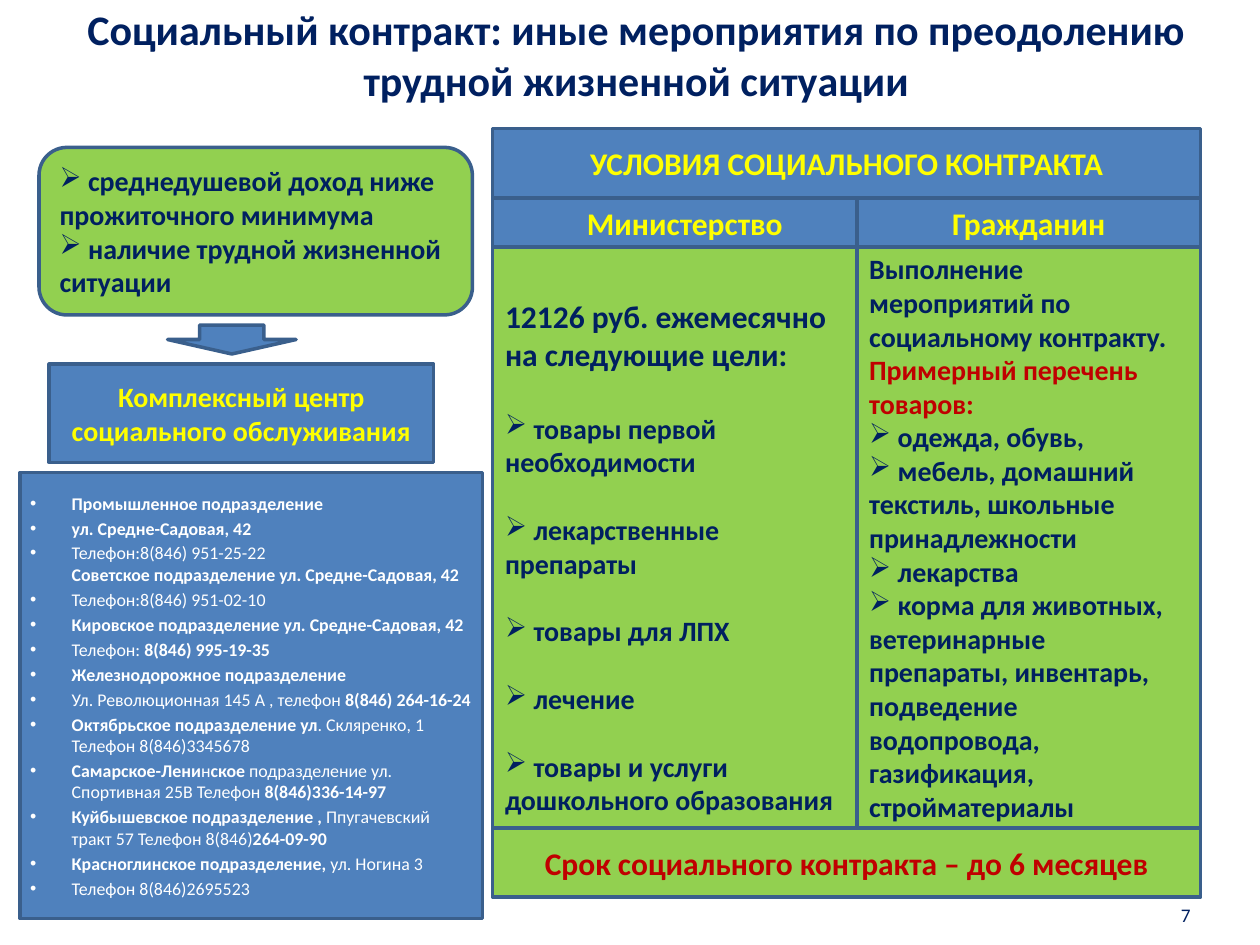
"""Build the slide on the conditions of a social contract."""
from copy import deepcopy

from lxml import etree
from pptx import Presentation
from pptx.dml.color import RGBColor
from pptx.enum.shapes import MSO_SHAPE
from pptx.enum.text import MSO_ANCHOR, PP_ALIGN
from pptx.oxml.ns import qn
from pptx.util import Inches, Pt

RECT, ROUNDED, ARROW = MSO_SHAPE.RECTANGLE, MSO_SHAPE.ROUNDED_RECTANGLE, MSO_SHAPE.DOWN_ARROW
MIDDLE = MSO_ANCHOR.MIDDLE
LEFT, CENTER, RIGHT = PP_ALIGN.LEFT, PP_ALIGN.CENTER, PP_ALIGN.RIGHT
NAVY = RGBColor(0x00, 0x20, 0x60)
YELLOW = RGBColor(0xFF, 0xFF, 0x00)
RED = RGBColor(0xC0, 0x00, 0x00)
WHITE = RGBColor(0xFF, 0xFF, 0xFF)
GREEN = RGBColor(0x92, 0xD0, 0x50)
BLUE = RGBColor(0x4F, 0x81, 0xBD)
OUTLINE = RGBColor(0x3A, 0x5F, 0x8C)

TITLE = "Социальный контракт: иные мероприятия по преодолению трудной жизненной ситуации"
PAGE = "7"
CRITERIA = [
    "➢ среднедушевой доход ниже прожиточного минимума",
    "➢ наличие трудной жизненной ситуации",
]
CENTRE = "Комплексный центр социального обслуживания"
CONDITIONS = "УСЛОВИЯ СОЦИАЛЬНОГО КОНТРАКТА"
MINISTRY, CITIZEN = "Министерство", "Гражданин"
SUPPORT = [
    "|12126 руб. ежемесячно на следующие цели:|",
    "➢ товары первой необходимости",
    "➢ лекарственные препараты",
    "➢ товары для ЛПХ",
    "➢ лечение",
    "➢ товары и услуги дошкольного образования",
]
DUTIES = [
    "Выполнение мероприятий по социальному контракту. |Примерный перечень товаров:|",
    "➢ одежда, обувь,",
    "➢ мебель, домашний текстиль, школьные принадлежности",
    "➢ лекарства",
    "➢ корма для животных, ветеринарные препараты, инвентарь, подведение водопровода, "
    "газификация, стройматериалы",
]
TERM = "Срок социального контракта – до 6 месяцев"
OFFICES = [
    "•|Промышленное подразделение|",
    "•|ул. Средне-Садовая, 42|",
    "•Телефон:8(846) 951-25-22\n|Советское подразделение ул. Средне-Садовая, 42|",
    "•Телефон:8(846) 951-02-10",
    "•|Кировское подразделение ул. Средне-Садовая, 42|",
    "•Телефон: |8(846) 995-19-35|",
    "•|Железнодорожное подразделение|",
    "•Ул. Революционная 145 А , телефон |8(846) 264-16-24|",
    "•|Октябрьское подразделение ул|. Скляренко, 1 Телефон 8(846)3345678",
    "•|Самарское-Лени|н|ское |подразделение ул. Спортивная 25В Телефон |8(846)336-14-97|",
    "•|Куйбышевское подразделение , |Ппугачевский тракт 57 Телефон 8(846)|264-09-90|",
    "•|Красноглинское подразделение, |ул. Ногина 3",
    "•Телефон 8(846)2695523",
]

TERMS_LEFT, TERMS_TOP = 3.91, 1.02
MINISTRY_W, CITIZEN_W = 2.89, 2.73
MINISTRY_HEAD_W = 3.05
BAND_H, HEAD_H, DETAIL_H = 0.55, 0.39, 4.61
CITIZEN_LEFT = TERMS_LEFT + MINISTRY_W
TERMS_W = MINISTRY_W + CITIZEN_W
HEAD_TOP = TERMS_TOP + BAND_H
DETAIL_TOP = HEAD_TOP + HEAD_H
TERM_TOP = DETAIL_TOP + DETAIL_H


def text_format(size, color, bold=True):
    return {"name": "Calibri", "size": Pt(size), "bold": bold, "color": color}


def apply_format(font, values):
    for name, value in values.items():
        if name == "color":
            font.color.rgb = value
        else:
            setattr(font, name, value)


def add_bullet(paragraph, mark, hanging):
    properties = paragraph._p.get_or_add_pPr()
    properties.set("marL", str(Inches(hanging)))
    properties.set("indent", str(-Inches(hanging)))
    typeface = "Wingdings" if mark == "➢" else "Arial"
    etree.SubElement(properties, qn("a:buFont")).set("typeface", typeface)
    character = "Ø" if mark == "➢" else mark
    etree.SubElement(properties, qn("a:buChar")).set("char", character)


def add_break(paragraph):
    paragraph.add_line_break()
    paragraph._p[-1].append(deepcopy(paragraph.runs[-1]._r.rPr))


def write(shape, lines, base, accent=None, align=LEFT, gaps=(), hanging=0, insets=None):
    frame = shape.text_frame
    frame.word_wrap = True
    frame.vertical_anchor = MIDDLE
    for side, inset in (insets or {}).items():
        setattr(frame, f"margin_{side}", Inches(inset))
    for index, line in enumerate(lines):
        paragraph = frame.add_paragraph() if index else frame.paragraphs[0]
        paragraph.alignment = align
        if index < len(gaps):
            paragraph.space_before = Pt(gaps[index])
        if line[0] in "➢•":
            add_bullet(paragraph, line[0], hanging)
            line = line[1:]
        for position, part in enumerate(line.split("|")):
            for row, text in enumerate(part.split("\n")):
                if row:
                    add_break(paragraph)
                if text:
                    run = paragraph.add_run()
                    run.text = text
                    apply_format(run.font, accent if position % 2 else base)


def add_box(slide, kind, place, fill):
    box = slide.shapes.add_shape(kind, *map(Inches, place))
    box.shadow.inherit = False
    box.fill.solid()
    box.fill.fore_color.rgb = fill
    box.line.color.rgb = OUTLINE
    box.line.width = Pt(2)
    return box


def main():
    deck = Presentation()
    deck.slide_width, deck.slide_height = Inches(10), Inches(7.5)
    slide = deck.slides.add_slide(deck.slide_layouts[6])
    tight = {"left": 0.08, "right": 0.08, "top": 0.04, "bottom": 0.04}
    labels = [
        (TITLE, (0.55, 0.23, 9, 0.4), text_format(24, NAVY), CENTER),
        (PAGE, (7.2, 7.06, 2.33, 0.4), text_format(11, NAVY, False), RIGHT),
    ]
    for text, place, style, align in labels:
        label = slide.shapes.add_textbox(*map(Inches, place))
        write(label, [text], style, align=align, insets=tight)

    body = text_format(16, NAVY)
    criteria = add_box(slide, ROUNDED, (0.31, 1.17, 3.44, 1.33), GREEN)
    write(criteria, CRITERIA, body)
    add_box(slide, ARROW, (1.33, 2.58, 1.02, 0.23), BLUE)

    heading = text_format(18, YELLOW)
    banners = [
        (CENTRE, (0.39, 2.89, 3.05, 0.78), BLUE, text_format(16, YELLOW)),
        (CONDITIONS, (TERMS_LEFT, TERMS_TOP, TERMS_W, BAND_H), BLUE, heading),
        (MINISTRY, (TERMS_LEFT, HEAD_TOP, MINISTRY_HEAD_W, HEAD_H), BLUE, heading),
        (CITIZEN, (CITIZEN_LEFT, HEAD_TOP, CITIZEN_W, HEAD_H), BLUE, heading),
        (TERM, (TERMS_LEFT, TERM_TOP, TERMS_W, BAND_H), GREEN, text_format(18, RED)),
    ]
    for text, place, fill, style in banners:
        write(add_box(slide, RECT, place, fill), [text], style, align=CENTER)

    support = add_box(slide, RECT, (TERMS_LEFT, DETAIL_TOP, MINISTRY_W, DETAIL_H), GREEN)
    write(support, SUPPORT, body, text_format(18, NAVY),
          gaps=[0, 22] + [19.5] * 4, insets={"top": 0.36})
    duties = add_box(slide, RECT, (CITIZEN_LEFT, DETAIL_TOP, CITIZEN_W, DETAIL_H), GREEN)
    write(duties, DUTIES, body, text_format(16, RED))
    offices = add_box(slide, RECT, (0.16, 3.75, 3.67, 3.54), BLUE)
    write(offices, OFFICES, text_format(10.2, WHITE, False), text_format(10.2, WHITE),
          gaps=[2] * len(OFFICES), hanging=0.33, insets=tight)
    deck.save("out.pptx")


if __name__ == "__main__":
    main()
